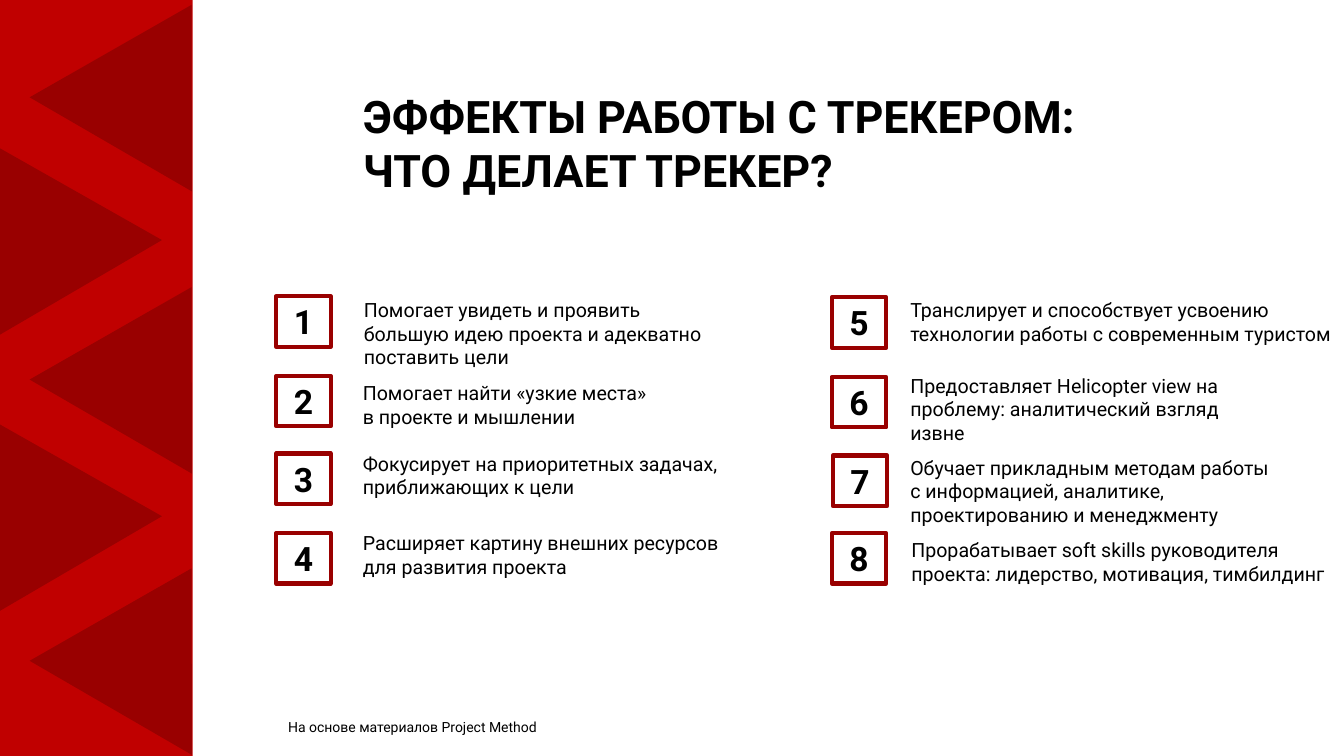
from pptx import Presentation
from pptx import util as u
from pptx.dml.color import RGBColor
from pptx.enum import shapes, text

COLORS = {"band": "C00000", "accent": "990000", "ink": "000000"}
FONT = "Roboto"


class SlideBuilder:
    """Holds the style and the slide being drawn."""

    def __init__(self, slide):
        self.slide = slide

    def color(self, name):
        return RGBColor.from_string(COLORS[name])

    def fill_text(self, frame, lines, paragraph_format=None, **font_format):
        frame.text = "\n".join(lines)
        for paragraph in frame.paragraphs:
            for key, value in (paragraph_format or {}).items():
                setattr(paragraph, key, value)
            for run in paragraph.runs:
                for key, value in {"name": FONT, **font_format}.items():
                    setattr(run.font, key, value)
                run.font.color.rgb = self.color("ink")

    def shape(self, kind, left, top, width, height, fill=None, rotation=0):
        item = self.slide.shapes.add_shape(
            kind, *map(u.Inches, (left, top, width, height)))
        item.shadow.inherit = False
        item.rotation = rotation
        item.line.fill.background()
        if fill:
            item.fill.solid()
            item.fill.fore_color.rgb = self.color(fill)
        else:
            item.fill.background()
        return item

    def number(self, left, top, value):
        badge = self.shape(shapes.MSO_SHAPE.RECTANGLE, left, top, 0.54, 0.5)
        badge.line.color.rgb = self.color("accent")
        badge.line.width = u.Pt(3)
        badge.text_frame.vertical_anchor = text.MSO_ANCHOR.MIDDLE
        self.fill_text(badge.text_frame, [str(value)],
                       {"alignment": text.PP_ALIGN.CENTER}, size=u.Pt(24), bold=True)

    def text(self, left, top, width, height, lines, paragraph_format=None, **font_format):
        box = self.slide.shapes.add_textbox(
            *map(u.Inches, (left, top, width, height)))
        frame_format = {"word_wrap": True,
                        "auto_size": text.MSO_AUTO_SIZE.SHAPE_TO_FIT_TEXT}
        for key, value in frame_format.items():
            setattr(box.text_frame, key, value)
        self.fill_text(box.text_frame, lines, paragraph_format, **font_format)


# Per effect: badge left and top, then text left, top, width, height and lines
EFFECTS = [
    (2.74, 2.94, 3.51, 2.91, 3.82, 0.81,
     ["Помогает увидеть и проявить большую идею проекта и адекватно поставить цели"]),
    (2.74, 3.73, 3.5, 3.73, 3.15, 0.57,
     ["Помогает найти «узкие места» в проекте и мышлении"]),
    (2.74, 4.5, 3.5, 4.43, 3.92, 0.57,
     ["Фокусирует на приоритетных задачах, приближающих к цели"]),
    (2.74, 5.29, 3.5, 5.22, 4.06, 0.57,
     ["Расширяет картину внешних ресурсов", "для развития проекта"]),
    (8.25, 2.95, 8.93, 2.91, 4.4, 0.57,
     ["Транслирует и способствует усвоению технологии работы с современным туристом"]),
    (8.25, 3.74, 8.93, 3.66, 3.82, 0.57,
     ["Предоставляет Helicopter view на проблему: аналитический взгляд извне"]),
    (8.26, 4.52, 8.93, 4.47, 3.77, 0.81,
     ["Обучает прикладным методам работы с информацией, аналитике, "
      "проектированию и менеджменту"]),
    (8.25, 5.29, 8.94, 5.29, 4.4, 0.57,
     ["Прорабатывает soft skills руководителя проекта: лидерство, мотивация, тимбилдинг"]),
]


def main():
    deck = Presentation()
    deck.slide_width, deck.slide_height = u.Inches(13.33), u.Inches(7.5)
    builder = SlideBuilder(deck.slides.add_slide(deck.slide_layouts[6]))

    # Red band with triangles pointing left and right in turn
    builder.shape(shapes.MSO_SHAPE.RECTANGLE, 0, 0, 1.91, 7.5, "band")
    for index, top in enumerate([-0.06, 1.36, 2.74, 4.1, 5.53]):
        left, rotation = [(0.57, 30.1), (-0.53, 329.7)][index % 2]
        builder.shape(shapes.MSO_SHAPE.ISOSCELES_TRIANGLE, left, top, 1.86, 1.6,
                      "accent", rotation)

    # Title
    builder.text(3.5, 0.83, 9.67, 1.18,
                 ["ЭФФЕКТЫ РАБОТЫ С ТРЕКЕРОМ:", "ЧТО ДЕЛАЕТ ТРЕКЕР?"],
                 size=u.Pt(32), bold=True)

    # Numbered effects
    for value, (badge_left, badge_top, *place, lines) in enumerate(EFFECTS, 1):
        builder.number(badge_left, badge_top, value)
        builder.text(*place, lines, size=u.Pt(14))

    # Source note
    builder.text(2.76, 7.07, 5.48, 0.27, ["На основе материалов Project Method"],
                 {"line_spacing": 1.07}, size=u.Pt(10))

    deck.save("out.pptx")


if __name__ == "__main__":
    main()
